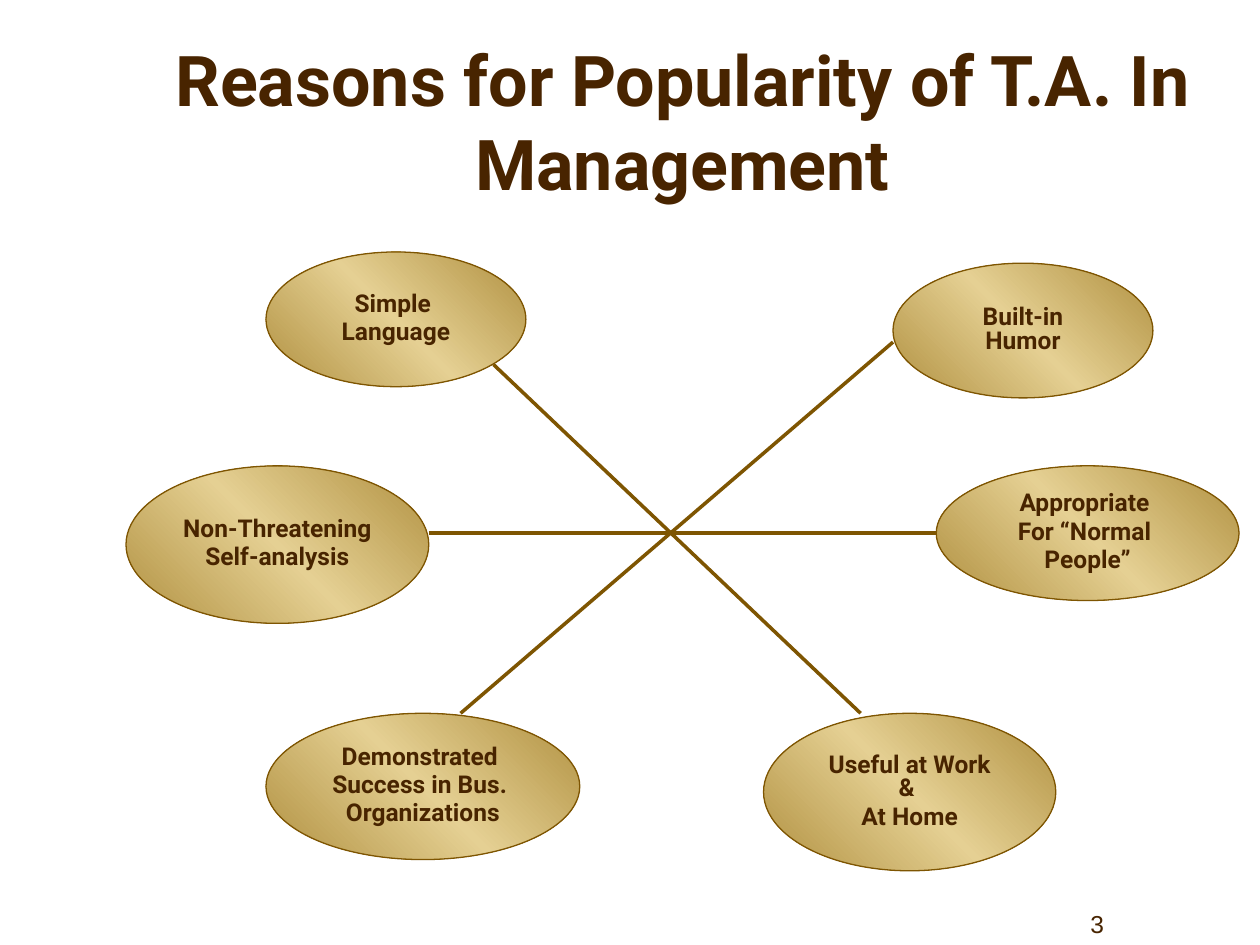
from copy import deepcopy

from lxml.etree import SubElement
from pptx import Presentation
from pptx.dml.color import RGBColor
from pptx.enum.shapes import MSO_CONNECTOR, MSO_SHAPE
from pptx.enum.text import MSO_ANCHOR, PP_ALIGN
from pptx.oxml.ns import qn
from pptx.util import Pt

COLORS = {"text": "482400", "outline": "7E5502", "edge": "B09040", "band": "E5D093"}

TITLE = "Reasons for Popularity of T.A. In Management"
PAGE_NUMBER = "3"

# (paragraphs, (left, top, width, height))
REASONS = [
    (["Simple ", "Language"], (152, 144, 148.5, 77)),
    (["Useful at Work & ", "At Home"], (436.3, 407.6, 167, 90)),
    (["Demonstrated ", "Success in Bus. ", "Organizations"], (152, 407.6, 179.3, 83.6)),
    (["Non-Threatening ", "Self-analysis"], (72, 266.2, 173, 90)),
    (["Appropriate ", "For “Normal ", "People”"], (535, 266.2, 173, 77)),
    (["Built-in Humor"], (510.3, 150.4, 148.5, 77)),
]

# (begin x, begin y, end x, end y)
SPOKES = [
    (282, 208.3, 491.8, 407.6),
    (510.3, 195.5, 263.2, 407.6),
    (245, 304.7, 535, 304.7),
]


def color(name):
    return RGBColor.from_string(COLORS[name])


def style_paragraph(paragraph, size, font_name, bold):
    paragraph.alignment = PP_ALIGN.CENTER
    font = paragraph.font
    font.size, font.name, font.bold = Pt(size), font_name, bold
    font.color.rgb = color("text")


def add_label(slide, text, box, size, font_name, bold=False):
    frame = slide.shapes.add_textbox(*map(Pt, box)).text_frame
    frame.word_wrap = True
    frame.vertical_anchor = MSO_ANCHOR.BOTTOM
    frame.text = text
    style_paragraph(frame.paragraphs[0], size, font_name, bold)


def fill_with_sheen(fill):
    """Diagonal gradient: dark edges with a light band in the middle."""
    fill.gradient()
    fill.gradient_angle = 45
    first = fill.gradient_stops[0]._gs
    first.addnext(deepcopy(first))
    for stop, name, position in zip(fill.gradient_stops, ("edge", "band", "edge"), (0, 0.5, 1)):
        stop.color.rgb = color(name)
        stop.color.brightness = 0
        stop.position = position


def add_reason(slide, lines, box):
    ellipse = slide.shapes.add_shape(MSO_SHAPE.OVAL, *map(Pt, box))
    ellipse.shadow.inherit = False
    fill_with_sheen(ellipse.fill)
    ellipse.line.color.rgb = color("outline")
    ellipse.line.width = Pt(0.75)
    frame = ellipse.text_frame
    frame.word_wrap = True
    frame.vertical_anchor = MSO_ANCHOR.MIDDLE
    frame.text = "\n".join(lines)
    for index, paragraph in enumerate(frame.paragraphs):
        paragraph.line_spacing = 0.8
        paragraph.space_before = Pt(2.8 if index else 0)
        style_paragraph(paragraph, 14, "Roboto", True)


def add_spoke(slide, ends):
    spoke = slide.shapes.add_connector(MSO_CONNECTOR.STRAIGHT, *map(Pt, ends))
    spoke.line.color.rgb = color("outline")
    spoke.line.width = Pt(2)
    SubElement(spoke._element.spPr, qn("a:effectLst"))


def main():
    deck = Presentation()
    deck.slide_width, deck.slide_height = Pt(720), Pt(540)
    slide = deck.slides.add_slide(deck.slide_layouts[6])
    add_label(slide, PAGE_NUMBER, (552, 504, 150, 36), 14, "Arial")
    add_label(slide, TITLE, (84, 60.5, 612, 60), 40, "Roboto", True)
    for lines, box in REASONS:
        add_reason(slide, lines, box)
    for ends in SPOKES:
        add_spoke(slide, ends)
    deck.save("out.pptx")


if __name__ == "__main__":
    main()
